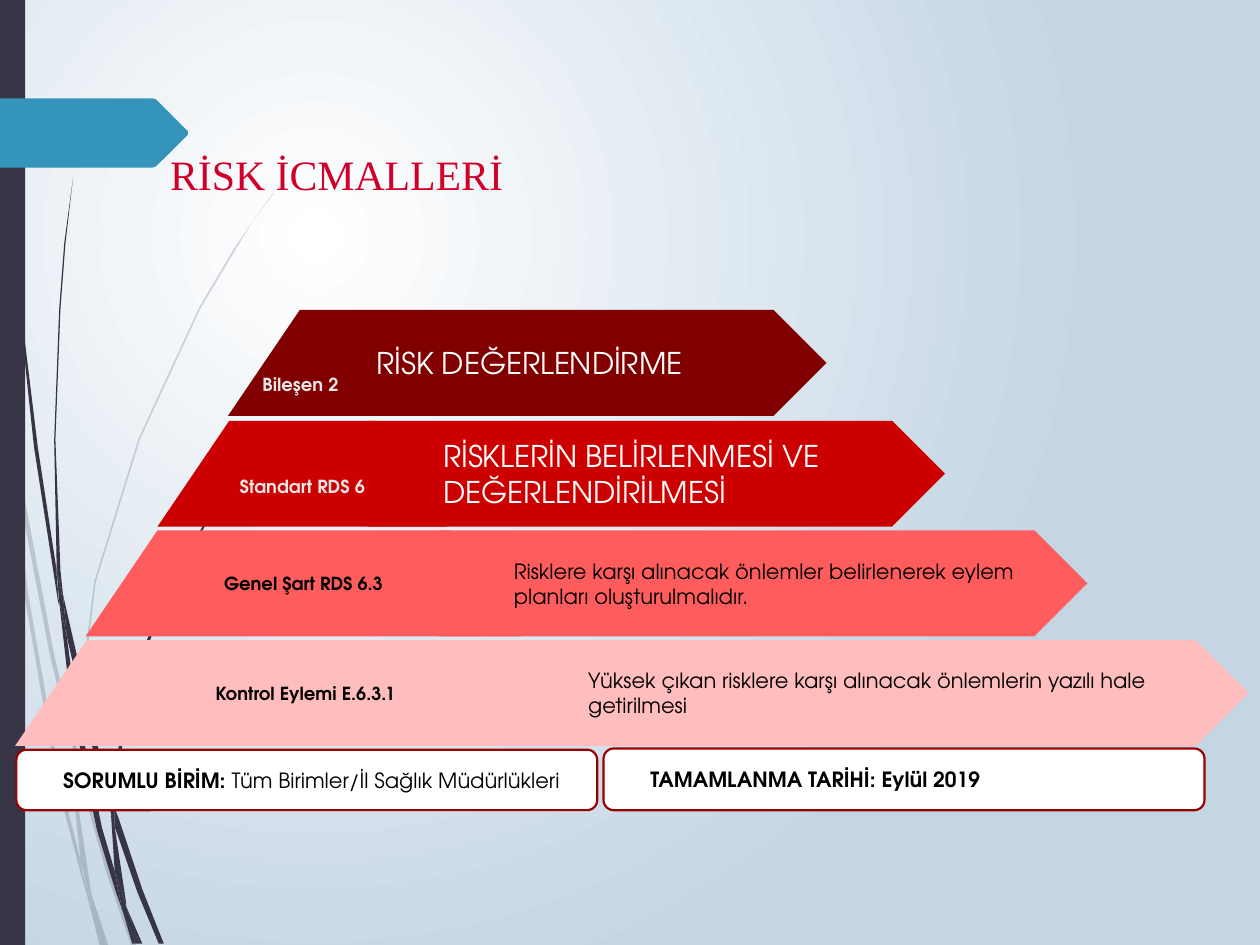
from dataclasses import dataclass

from lxml import etree
from pptx import Presentation
from pptx.dml.color import RGBColor as RGB
from pptx.enum.shapes import MSO_SHAPE as SHAPE
from pptx.enum.text import MSO_ANCHOR as ANCHOR, MSO_AUTO_SIZE as AUTO, PP_ALIGN as ALIGN
from pptx.oxml.ns import qn
from pptx.util import Pt

PX = 9144  # 100 px to the inch


@dataclass(frozen=True)
class Theme:
    font: str = "TeX Gyre Adventor"
    title_font: str = "Times New Roman"
    title: str = "D20028"
    dark: str = "373545"
    arrow: str = "3494BA"
    white: str = "FFFFFF"
    black: str = "000000"
    pale: str = "E7E6E6"
    sky: str = "C4D5E4"
    border: str = "990000"
    tiers: tuple = ("800000", "CC0000", "FF5D5D", "FFBDBD")
    title_size: float = 23.9
    heading_size: float = 17.1
    body_size: float = 12
    label_size: float = 10.3


class Builder:
    def __init__(self, prs, theme):
        self.t = theme
        self.s = prs.slides.add_slide(prs.slide_layouts[5])

    def background(self, inner, outer):
        """Radial gradient centred on the upper left quarter."""
        fill = self.s.background.fill
        fill.gradient()
        for stop, color, pos in zip(fill.gradient_stops, (inner, outer), (0, 1)):
            stop.color.rgb = RGB.from_string(color)
            stop.position = pos
        lin = self.s.element.find(".//" + qn("a:lin"))
        radial = etree.Element(qn("a:path"), {"path": "circle"})
        etree.SubElement(radial, qn("a:fillToRect"), l="50000", t="50000", r="100000", b="100000")
        lin.getparent().replace(lin, radial)

    def paint(self, sp, fill, line=None, opacity=100):
        sp.shadow.inherit = False
        sp.fill.solid()
        sp.fill.fore_color.rgb = RGB.from_string(fill)
        if opacity < 100:
            clr = sp.element.find(".//" + qn("a:srgbClr"))
            etree.SubElement(clr, qn("a:alpha"), val=str(opacity * 1000))
        if line:
            sp.line.color.rgb = RGB.from_string(line)
            sp.line.width = Pt(1.25)
        else:
            sp.line.fill.background()
        return sp

    def preset(self, kind, x, y, w, h, fill, line=None):
        sp = self.s.shapes.add_shape(kind, x * PX, y * PX, w * PX, h * PX)
        return self.paint(sp, fill, line)

    def polygon(self, points, fill, opacity=100, parent=None):
        shapes = (parent or self.s).shapes
        path = shapes.build_freeform(*points[0], scale=PX)
        path.add_line_segments(points[1:], close=True)
        return self.paint(path.convert_to_shape(), fill, opacity=opacity)

    def strands(self, outlines, opacity):
        group = self.s.shapes.add_group_shape()
        for points in outlines:
            self.polygon(points, self.t.dark, opacity, group)

    def text(self, sp, text, size, color, bold=False, align=ALIGN.LEFT, indent=0, rest=""):
        tf = sp.text_frame
        tf.word_wrap = True
        tf.vertical_anchor = ANCHOR.MIDDLE
        p = tf.paragraphs[0]
        p.text = text
        p.alignment = align
        if indent:
            p._p.get_or_add_pPr().set("marL", str(indent * PX))
        if rest:
            p.add_run().text = rest
        for i, r in enumerate(p.runs):
            r.font.name, r.font.size = self.t.font, Pt(size)
            r.font.bold = bold and i == 0
            r.font.color.rgb = RGB.from_string(color)

    def label(self, sp, text, color, drop):
        """Centred bold label, pushed down by a larger top inset."""
        self.text(sp, text, self.t.label_size, color, True, ALIGN.CENTER)
        tf = sp.text_frame
        tf.margin_left = tf.margin_right = tf.margin_bottom = 2 * PX
        tf.margin_top = (2 + drop) * PX

    def title(self, text, x, y, w, h):
        sp = self.s.shapes.title
        sp.left, sp.top, sp.width, sp.height = (v * PX for v in (x, y, w, h))
        tf = sp.text_frame
        tf.text = text
        tf.auto_size = AUTO.NONE
        tf.vertical_anchor = ANCHOR.TOP
        tf.margin_top = 9 * PX
        p = tf.paragraphs[0]
        p.alignment = ALIGN.LEFT
        font = p.runs[0].font
        font.name, font.size = self.t.title_font, Pt(self.t.title_size)
        font.color.rgb = RGB.from_string(self.t.title)
        self.s.shapes.element.append(sp.element)  # in front of the arrow


FAINT_STRANDS = [
    [(8, 350), (6, 322), (0, 282), (0, 299), (7, 344)],
    [(40, 522), (59, 599), (59, 586), (43, 520), (10, 345), (12, 376)],
    [(64, 607), (61, 596), (61, 610), (85, 694), (104, 750), (108, 750), (88, 692)],
    [(83, 750), (86, 750), (73, 711)],
    [(64, 683), (48, 619), (22, 469), (12, 376), (8, 350), (19, 470), (45, 621), (64, 693),
     (70, 714), (69, 707)],
    [(58, 599), (60, 646), (64, 683), (67, 692), (73, 711), (72, 706), (63, 646), (61, 610),
     (61, 608)],
    [(61, 584), (76, 462), (111, 349), (159, 245), (187, 198), (201, 175), (217, 154),
     (217, 153), (201, 175), (186, 197), (158, 244), (110, 348), (75, 461), (59, 584),
     (59, 586), (61, 596)],
    [(70, 714), (79, 750), (82, 750)],
    [(61, 608), (61, 596), (59, 586), (58, 599)],
    [(67, 692), (65, 683), (69, 707), (70, 714), (82, 750), (83, 750), (73, 711)],
]
DARK_STRANDS = [
    [(5, 110), (14, 233), (27, 355), (46, 477), (47, 481), (45, 457), (45, 453), (30, 355),
     (15, 232), (6, 109), (4, 48), (3, 0), (2, 0), (3, 48)],
    [(73, 592), (88, 645), (88, 631), (77, 590), (50, 472), (53, 505)],
    [(94, 649), (91, 641), (91, 656), (109, 708), (126, 749), (130, 749), (113, 706)],
    [(91, 691), (81, 657), (60, 556), (53, 505), (47, 477), (56, 557), (77, 659), (92, 708),
     (97, 722), (96, 717)],
    [(50, 472), (48, 453), (44, 349), (48, 245), (52, 193), (58, 141), (51, 193), (47, 245),
     (43, 349), (45, 449), (49, 472)],
    [(110, 749), (113, 749), (100, 719)],
    [(47, 477), (53, 505), (50, 472), (49, 472), (45, 449), (45, 453)],
    [(91, 633), (103, 552), (131, 476), (169, 406), (191, 374), (203, 359), (216, 344),
     (215, 344), (203, 358), (191, 373), (168, 405), (129, 474), (101, 551), (88, 631),
     (91, 641)],
    [(97, 722), (105, 749), (108, 749)],
    [(88, 645), (91, 691), (96, 706), (100, 719), (100, 716), (91, 656), (90, 651)],
    [(88, 645), (91, 656), (91, 641), (88, 631)],
    [(96, 706), (91, 691), (96, 717), (97, 722), (108, 749), (110, 749), (100, 719)],
]


def main():
    prs = Presentation()
    prs.slide_width, prs.slide_height = 1000 * PX, 750 * PX
    t = Theme()
    b = Builder(prs, t)

    # Backdrop: gradient, strands, side bar and page arrow
    b.background(t.white, t.sky)
    b.strands(FAINT_STRANDS, 20)
    b.strands(DARK_STRANDS, 100)
    b.preset(SHAPE.RECTANGLE, 0, 0, 20, 750, t.dark)
    b.polygon([(0, 78), (121, 78), (124, 79), (149, 104), (149, 107), (124, 132), (121, 133),
               (0, 133)], t.arrow)

    # Pyramid tiers: plate left, width, indent, text, size, label, label drop, colours
    tiers = [
        (239, 417, 50, "RİSK DEĞERLENDİRME", t.heading_size, "Bileşen 2", 34, t.white, t.pale),
        (292, 458, 50, "RİSKLERİN BELİRLENMESİ VE DEĞERLENDİRİLMESİ", t.heading_size,
         "Standart RDS 6", 20, t.white, t.pale),
        (348, 515, 50, "Risklere karşı alınacak önlemler belirlenerek eylem planları "
         "oluşturulmalıdır.", t.body_size, "Genel Şart RDS 6.3", 0, t.black, t.black),
        (415, 576, 42, "Yüksek çıkan risklere karşı alınacak önlemlerin yazılı hale getirilmesi",
         t.body_size, "Kontrol Eylemi E.6.3.1", 0, t.black, t.black),
    ]
    height, slant = 84, 57
    for i, (x, w, indent, text, size, label, drop, ink, label_ink) in enumerate(tiers):
        top = round(246 + 87.5 * i)
        plate = b.preset(SHAPE.PENTAGON, x, top, w, height, t.tiers[i])
        b.text(plate, text, size, ink, indent=indent)
        left, right, bottom = round(181 - 56.3 * i), 296 + 59 * i, top + height
        step = b.polygon([(left, bottom), (left + slant, top), (right - slant, top),
                          (right, bottom)], t.tiers[i])
        b.label(step, label, label_ink, drop)

    # Responsible unit and due date
    for x, y, w, h, text, rest in [
        (13, 595, 461, 48, "SORUMLU BİRİM:", " Tüm Birimler/İl Sağlık Müdürlükleri"),
        (479, 594, 477, 49, "TAMAMLANMA TARİHİ: Eylül 2019", ""),
    ]:
        box = b.preset(SHAPE.ROUNDED_RECTANGLE, x, y, w, h, t.white, t.border)
        b.text(box, text, t.body_size, t.black, True, indent=25, rest=rest)

    b.title("RİSK İCMALLERİ", 125, 109, 319, 59)
    prs.save("out.pptx")


if __name__ == "__main__":
    main()
